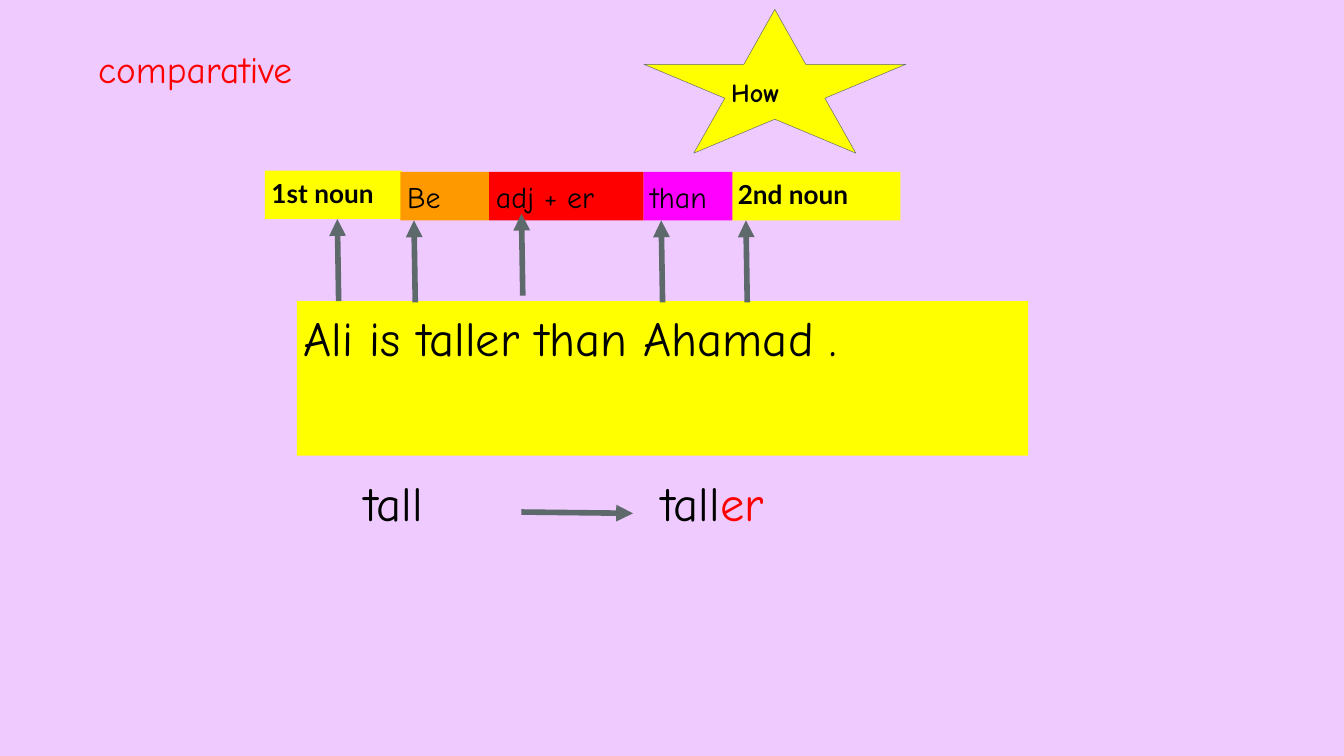
from lxml.etree import SubElement
from pptx import Presentation
from pptx.dml.color import RGBColor
from pptx.enum.shapes import MSO_CONNECTOR, MSO_SHAPE
from pptx.enum.text import MSO_ANCHOR, PP_ALIGN
from pptx.oxml.ns import qn
from pptx.util import Inches, Pt

COLORS = {
    "background": "EFCAFF", "yellow": "FFFF00", "orange": "FF9900",
    "red": "FF0000", "magenta": "FF00FF", "gray": "5E696C", "black": "000000",
}
HAND = {"name": "Comic Neue", "bold": False}
BIG = {**HAND, "size": Pt(26)}
LABEL = {**HAND, "size": Pt(16)}
NOUN = {"name": "Lato", "bold": True, "size": Pt(14)}
TITLE = {**HAND, "size": Pt(20)}
STAR = {"name": "Comic Neue", "bold": True, "size": Pt(14)}


def rgb(name):
    return RGBColor.from_string(COLORS[name])


def write_text(shape, runs, font_format, anchor=MSO_ANCHOR.TOP):
    """Fill a shape with one left-aligned paragraph of (text, color) runs."""
    frame = shape.text_frame
    frame_format = {
        "word_wrap": True, "vertical_anchor": anchor,
        "margin_left": Inches(0.05), "margin_right": Inches(0.05),
        "margin_top": Inches(0.05), "margin_bottom": Inches(0.05),
    }
    for key, value in frame_format.items():
        setattr(frame, key, value)
    paragraph = frame.paragraphs[0]
    paragraph.alignment = PP_ALIGN.LEFT
    for text, color in runs:
        run = paragraph.add_run()
        run.text = text
        for key, value in font_format.items():
            setattr(run.font, key, value)
        run.font.color.rgb = rgb(color)


def add_title(slide, text, left, top, width, height):
    title = slide.shapes.title
    position = {"left": left, "top": top, "width": width, "height": height}
    for key, value in position.items():
        setattr(title, key, Inches(value))
    write_text(title, [(text, "red")], TITLE)


def add_text(slide, runs, font_format, box, anchor=MSO_ANCHOR.TOP):
    text_box = slide.shapes.add_textbox(*map(Inches, box))
    write_text(text_box, runs, font_format, anchor)


def add_filled_shape(slide, kind, color, box):
    shape = slide.shapes.add_shape(kind, *map(Inches, box))
    shape.shadow.inherit = False
    shape.fill.solid()
    shape.fill.fore_color.rgb = rgb(color)
    shape.line.fill.background()
    return shape


def add_block(slide, text, font_format, color, box, text_height):
    """Draw a colored block with its text box aligned to the block's top."""
    add_filled_shape(slide, MSO_SHAPE.RECTANGLE, color, box)
    add_text(slide, [(text, "black")], font_format, (*box[:3], text_height))


def add_star(slide):
    star = add_filled_shape(slide, MSO_SHAPE.STAR_5_POINT, "yellow", (4.79, 0.07, 1.95, 1.07))
    star.line.color.rgb = rgb("gray")
    star.line.width = Pt(0.25)
    add_text(slide, [("How", "black")], STAR, (5.39, 0.5, 0.74, 0.37), MSO_ANCHOR.MIDDLE)


def add_arrow(slide, start_x, start_y, end_x, end_y):
    arrow = slide.shapes.add_connector(
        MSO_CONNECTOR.STRAIGHT, *map(Inches, (start_x, start_y, end_x, end_y)))
    arrow.line.color.rgb = rgb("gray")
    arrow.line.width = Pt(3)
    SubElement(arrow.line._get_or_add_ln(), qn("a:tailEnd"), type="triangle")
    SubElement(arrow._element.spPr, qn("a:effectLst"))


def main():
    # Widescreen page, 16 to 9
    presentation = Presentation()
    presentation.slide_width = Inches(10)
    presentation.slide_height = Inches(10) * 9 // 16
    slide = presentation.slides.add_slide(presentation.slide_layouts[5])
    slide.background.fill.solid()
    slide.background.fill.fore_color.rgb = rgb("background")

    add_title(slide, "comparative", 0.68, 0.29, 1.77, 0.5)
    add_star(slide)

    # Example sentence
    add_block(slide, "Ali is taller than Ahamad .", BIG, "yellow",
              (2.21, 2.24, 5.44, 1.15), 0.62)

    # Sentence pattern above the example
    pattern = [
        ("1st noun", NOUN, "yellow", 1.97, 1.27, 1.02, 0.35),
        ("2nd noun", NOUN, "yellow", 5.44, 1.28, 1.26, 0.35),
        ("Be", LABEL, "orange", 2.98, 1.28, 0.66, 0.43),
        ("adj + er", LABEL, "red", 3.64, 1.28, 1.15, 0.43),
        ("than", LABEL, "magenta", 4.79, 1.28, 0.66, 0.43),
    ]
    for text, font_format, color, left, top, width, text_height in pattern:
        add_block(slide, text, font_format, color, (left, top, width, 0.36), text_height)

    # Arrows from each word to its part of the pattern
    for x, y in [(2.52, 2.24), (3.09, 2.25), (3.89, 2.2), (4.93, 2.25), (5.56, 2.25)]:
        add_arrow(slide, x, y, x - 0.01, y - 0.61)

    # Adjective and its comparative form
    add_text(slide, [("tall", "black")], BIG, (2.66, 3.47, 1.39, 0.62))
    add_text(slide, [("tall", "black"), ("er", "red")], BIG, (4.87, 3.47, 1.39, 0.62))
    add_arrow(slide, 3.88, 3.81, 4.71, 3.82)

    presentation.save("out.pptx")


if __name__ == "__main__":
    main()
